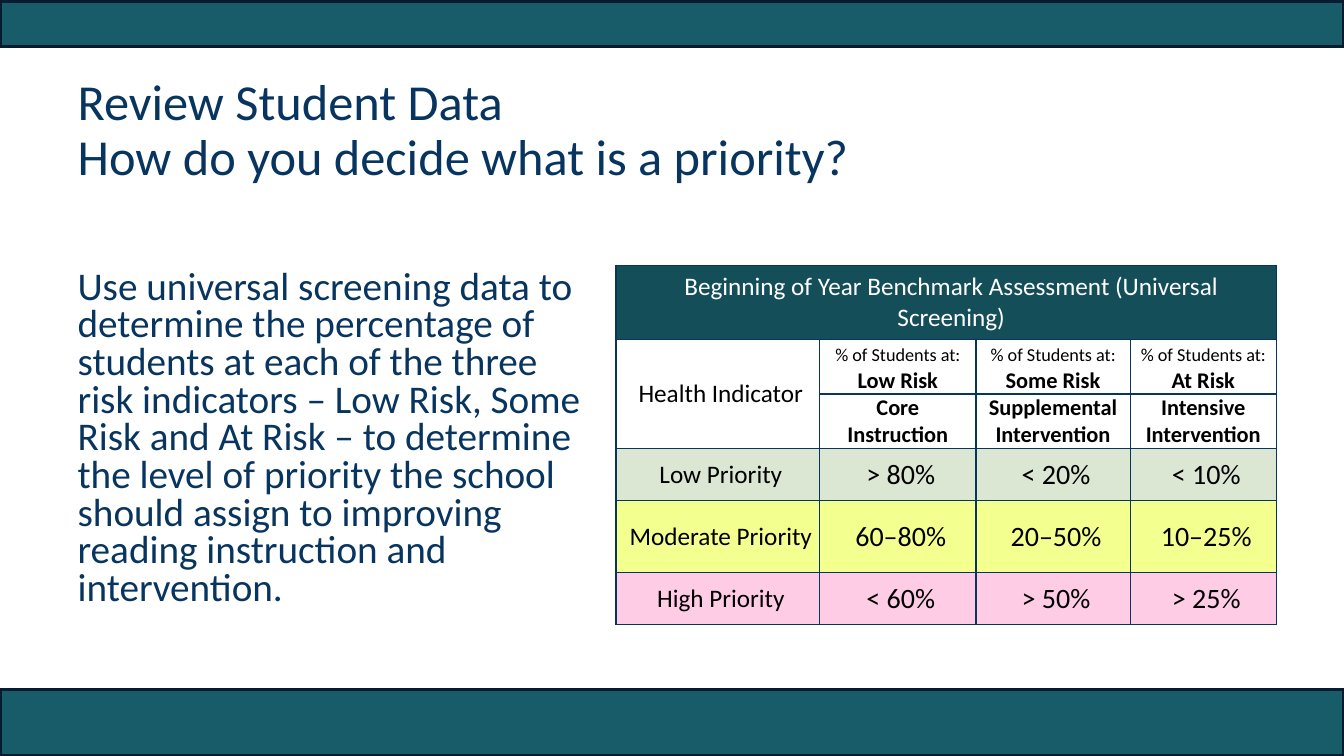
"""Build the slide on choosing priorities from student screening data."""
from lxml.etree import SubElement
from pptx import Presentation
from pptx.dml.color import RGBColor
from pptx.enum.shapes import MSO_SHAPE
from pptx.enum.text import MSO_ANCHOR, MSO_AUTO_SIZE, PP_ALIGN
from pptx.oxml import parse_xml
from pptx.oxml.ns import nsdecls, qn
from pptx.util import Inches, Pt

NAVY = "08355F"
TEAL = "185C69"


def color(code):
    return RGBColor.from_string(code)


def write(frame, lines, sizes, tint="000000", bolds=(False,), align=PP_ALIGN.LEFT,
          anchor=MSO_ANCHOR.MIDDLE, space=1.0):
    frame.word_wrap = True
    frame.vertical_anchor = anchor
    for i, line in enumerate(lines):
        para = frame.paragraphs[0] if i == 0 else frame.add_paragraph()
        props = para._p.get_or_add_pPr()
        props.set("marL", "0")
        props.set("indent", "0")
        SubElement(props, qn("a:buNone"))
        para.alignment = align
        para.line_spacing = space
        para.space_before = Pt(0)
        run = para.add_run()
        run.text = line
        run.font.name = "Calibri"
        run.font.size = Pt(sizes[i % len(sizes)])
        run.font.bold = bolds[i % len(bolds)]
        run.font.color.rgb = color(tint)


deck = Presentation()
deck.slide_width = Inches(13.33)
deck.slide_height = Inches(7.5)
slide = deck.slides.add_slide(deck.slide_layouts[1])

for top, height in [(6.84, 0.66), (0.01, 0.45)]:
    bar = slide.shapes.add_shape(MSO_SHAPE.RECTANGLE, Inches(0), Inches(top),
                                 Inches(13.33), Inches(height))
    bar.shadow.inherit = False
    bar.fill.solid()
    bar.fill.fore_color.rgb = color(TEAL)
    bar.line.color.rgb = color("041B30")
    bar.line.width = Pt(2.5)

title, body = slide.shapes.title, slide.placeholders[1]
for box, place in [(title, (0.67, 0.53, 12, 1.55)), (body, (0.67, 2.63, 5.26, 3.57))]:
    box.left, box.top, box.width, box.height = [Inches(n) for n in place]
    box.text_frame.auto_size = MSO_AUTO_SIZE.NONE

write(title.text_frame, ["Review Student Data", "How do you decide what is a priority?"],
      [36], tint=NAVY, space=0.9)
write(body.text_frame, [
    "Use universal screening data to determine the percentage of students at each of "
    "the three risk indicators – Low Risk, Some Risk and At Risk – to determine the "
    "level of priority the school should assign to improving reading instruction and "
    "intervention."], [28], tint=NAVY, anchor=MSO_ANCHOR.TOP, space=0.8)

share = "% of Students at:"
rows = [
    ["Beginning of Year Benchmark Assessment (Universal Screening)", "", "", ""],
    ["Health Indicator"] + [f"{share}\n{risk}" for risk in ("Low Risk", "Some Risk", "At Risk")],
    ["", "Core\nInstruction", "Supplemental Intervention", "Intensive Intervention"],
    ["Low Priority", "> 80%", "< 20%", "< 10%"],
    ["Moderate Priority", "60–80%", "20–50%", "10–25%"],
    ["High Priority", "< 60%", "> 50%", "> 25%"],
]
fills = ["144E59", "FFFFFF", "FFFFFF", "DBE6D3", "F3FF8E", "FECCE4"]
widths = [2.02, 1.55, 1.53, 1.45]
heights = [0.74, 0.54, 0.54, 0.51, 0.72, 0.51]

grid = slide.shapes.add_table(6, 4, Inches(6.11), Inches(2.63),
                              Inches(sum(widths)), Inches(sum(heights))).table
grid.first_row = grid.horz_banding = False
for col, width in zip(grid.columns, widths):
    col.width = Inches(width)
for row, height in zip(grid.rows, heights):
    row.height = Inches(height)
grid.cell(0, 0).merge(grid.cell(0, 3))
grid.cell(1, 0).merge(grid.cell(2, 0))

for r, texts in enumerate(rows):
    for c, text in enumerate(texts):
        cell = grid.cell(r, c)
        cell.fill.solid()
        cell.fill.fore_color.rgb = color(fills[r])
        for i, side in enumerate(("lnL", "lnR", "lnT", "lnB")):
            edge = parse_xml(f'<a:{side} {nsdecls("a")} w="12700"><a:solidFill>'
                             f'<a:srgbClr val="{NAVY}"/></a:solidFill></a:{side}>')
            cell._tc.get_or_add_tcPr().insert(i, edge)
        sub = r in (1, 2) and c > 0
        cell.margin_top = cell.margin_bottom = Inches(0)
        cell.margin_left = Inches(0.18 if r == 0 else 0.08 if sub else 0.12)
        cell.margin_right = Inches(0.08 if r == 0 or sub else 0.06)
        cell.vertical_anchor = MSO_ANCHOR.BOTTOM if sub else MSO_ANCHOR.MIDDLE
        if not text:
            continue
        sizes, bolds = [18 if c == 0 else 20], [False]
        if sub:
            sizes, bolds = ([13, 16], [False, True]) if r == 1 else ([16], [True])
        write(cell.text_frame, text.split("\n"), sizes, bolds=bolds, align=PP_ALIGN.CENTER,
              tint="FFFFFF" if r == 0 else "000000", anchor=cell.vertical_anchor)

deck.save("out.pptx")
